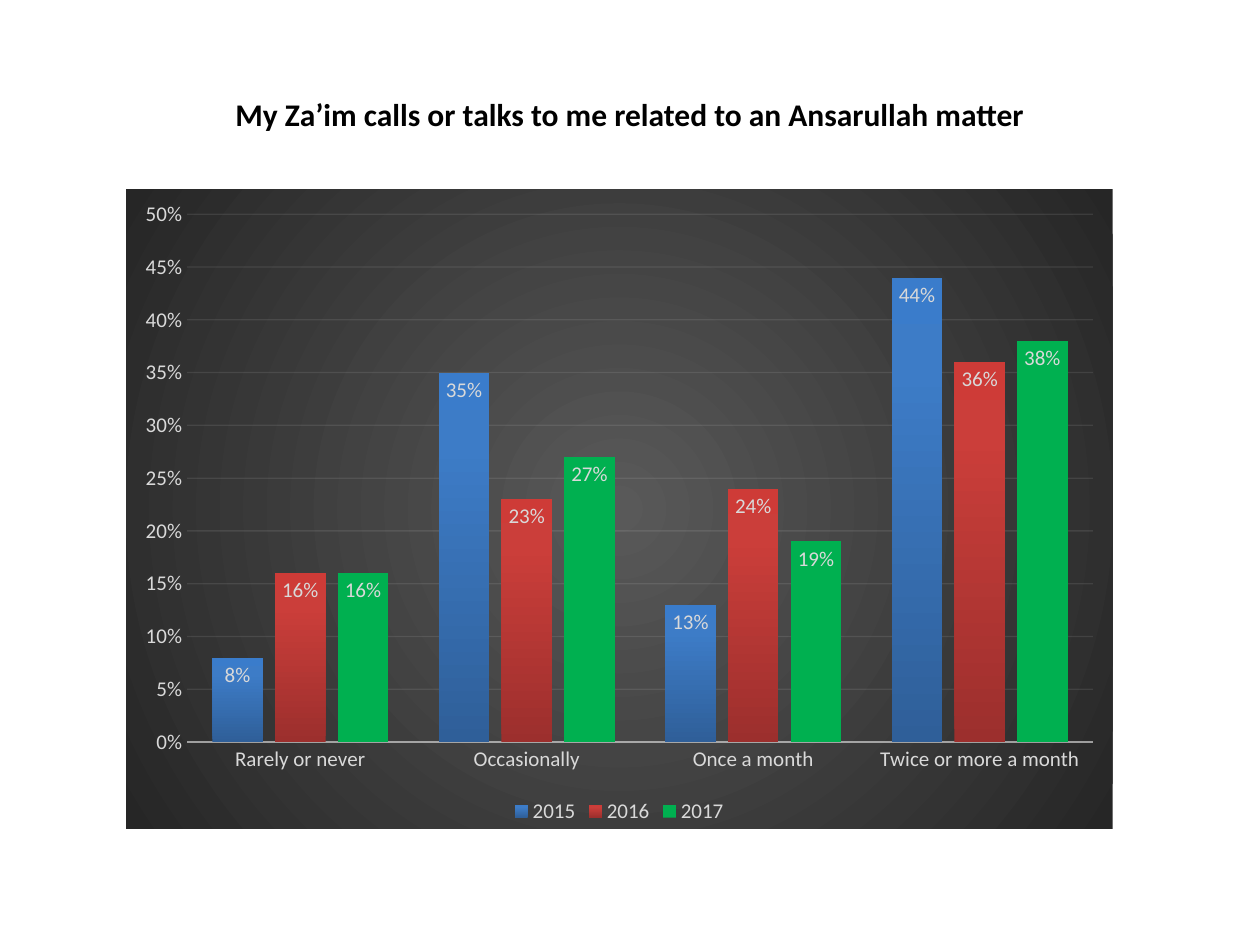
from lxml import etree
from pptx import Presentation
from pptx.chart.data import CategoryChartData
from pptx.dml.color import RGBColor
from pptx.enum.chart import (XL_CHART_TYPE, XL_LABEL_POSITION,
                             XL_LEGEND_POSITION, XL_TICK_MARK)
from pptx.enum.text import MSO_ANCHOR, PP_ALIGN
from pptx.oxml import parse_xml
from pptx.oxml.ns import qn
from pptx.util import Cm, Pt

COLUMN = XL_CHART_TYPE.COLUMN_CLUSTERED
IN_END = XL_LABEL_POSITION.INSIDE_END
BOTTOM = XL_LEGEND_POSITION.BOTTOM
NO_TICK = XL_TICK_MARK.NONE
MIDDLE = MSO_ANCHOR.MIDDLE
CENTER = PP_ALIGN.CENTER

# Content
TITLE = "My Za’im calls or talks to me related to an Ansarullah matter"
CATS = ["Rarely or never", "Occasionally", "Once a month",
        "Twice or more a month"]
YEARS = {
    "2015": [0.08, 0.35, 0.13, 0.44],
    "2016": [0.16, 0.23, 0.24, 0.36],
    "2017": [0.16, 0.27, 0.19, 0.38],
}

# Style: a fill is a list of (percent, colour) stops
FONT = "Calibri"
BLACK = RGBColor(0x00, 0x00, 0x00)
PALE = RGBColor(0xD9, 0xD9, 0xD9)
RULE = RGBColor(0xF2, 0xF2, 0xF2)
GREEN = RGBColor(0x00, 0xB0, 0x50)
BLUES = [(0, RGBColor(0x2F, 0x5F, 0x99)), (80, RGBColor(0x3D, 0x7C, 0xC7)),
         (100, RGBColor(0x3A, 0x7C, 0xCB))]
REDS = [(0, RGBColor(0x9C, 0x2F, 0x2D)), (80, RGBColor(0xCB, 0x3E, 0x3A)),
        (100, RGBColor(0xCE, 0x3B, 0x37))]
GREYS = [(0, RGBColor(0x59, 0x59, 0x59)), (100, RGBColor(0x26, 0x26, 0x26))]
FILLS = [BLUES, REDS, GREEN]
UPWARD = '<a:lin ang="16200000" scaled="0"/>'
RADIAL = ('<a:path path="circle"><a:fillToRect l="50000" t="50000" '
          'r="50000" b="50000"/></a:path>')
DRAW_NS = "http://schemas.openxmlformats.org/drawingml/2006/main"


def set_font(font, size, color, bold=None):
    font.name, font.size, font.bold = FONT, Pt(size), bold
    font.color.rgb = color


def make_grad(stops, shade):
    marks = "".join(
        f'<a:gs pos="{pos * 1000}"><a:srgbClr val="{color}"/></a:gs>'
        for pos, color in stops)
    return parse_xml(f'<a:gradFill xmlns:a="{DRAW_NS}" rotWithShape="1">'
                     f'<a:gsLst>{marks}</a:gsLst>{shade}</a:gradFill>')


def set_line(line, width, alpha):
    line.width = Pt(width)
    line.color.rgb = RULE
    tone = next(line._ln.iter(qn("a:srgbClr")))
    etree.SubElement(tone, qn("a:alpha"), val=str(alpha * 1000))


# Slide and title
prs = Presentation()
prs.slide_width, prs.slide_height = Cm(25.4), Cm(19.05)
slide = prs.slides.add_slide(prs.slide_layouts[5])
title = slide.shapes.title
title.left, title.top = Cm(1.27), Cm(1.4)
title.width, title.height = Cm(22.86), Cm(1.78)
frame = title.text_frame
frame.text = TITLE
frame.vertical_anchor = MIDDLE
head = frame.paragraphs[0]
head.alignment = CENTER
set_font(head.font, 18, BLACK, True)

# Chart
data = CategoryChartData(number_format="0%")
data.categories = CATS
for year, vals in YEARS.items():
    data.add_series(year, vals)
chart = slide.shapes.add_chart(COLUMN, Cm(2.54), Cm(3.81), Cm(19.89),
                               Cm(12.9), data).chart
chart.has_title = False
set_font(chart.font, 10, BLACK)
chart.has_legend = True
chart.legend.position = BOTTOM
chart.legend.include_in_layout = False
set_font(chart.legend.font, 12, PALE)

# Radial backdrop, placed right after the chart body
back = etree.Element(qn("c:spPr"))
back.append(make_grad(GREYS, RADIAL))
etree.SubElement(etree.SubElement(back, qn("a:ln")), qn("a:noFill"))
chart._chartSpace.find(qn("c:chart")).addnext(back)

# Axes
cat, val = chart.category_axis, chart.value_axis
for axis in (cat, val):
    axis.major_tick_mark = axis.minor_tick_mark = NO_TICK
    set_font(axis.tick_labels.font, 12, PALE)
set_line(cat.format.line, 1, 54)
val.format.line.fill.background()
val.minimum_scale, val.maximum_scale, val.major_unit = 0, 0.5, 0.05
val.tick_labels.number_format = "0%"
val.tick_labels.number_format_is_linked = False
set_line(val.major_gridlines.format.line, 0.75, 10)

# Columns and their labels
plot = chart.plots[0]
plot.gap_width, plot.overlap = 100, -24
plot.vary_by_categories = False
for series, fill in zip(plot.series, FILLS):
    series.invert_if_negative = False
    if fill is GREEN:
        series.format.fill.solid()
        series.format.fill.fore_color.rgb = fill
    else:
        series._element.get_or_add_spPr().append(make_grad(fill, UPWARD))
    labels = series.data_labels
    labels.show_value = True
    labels.position = IN_END
    labels.number_format = "0%"
    labels.number_format_is_linked = False
    set_font(labels.font, 12, PALE)

prs.save("out.pptx")
